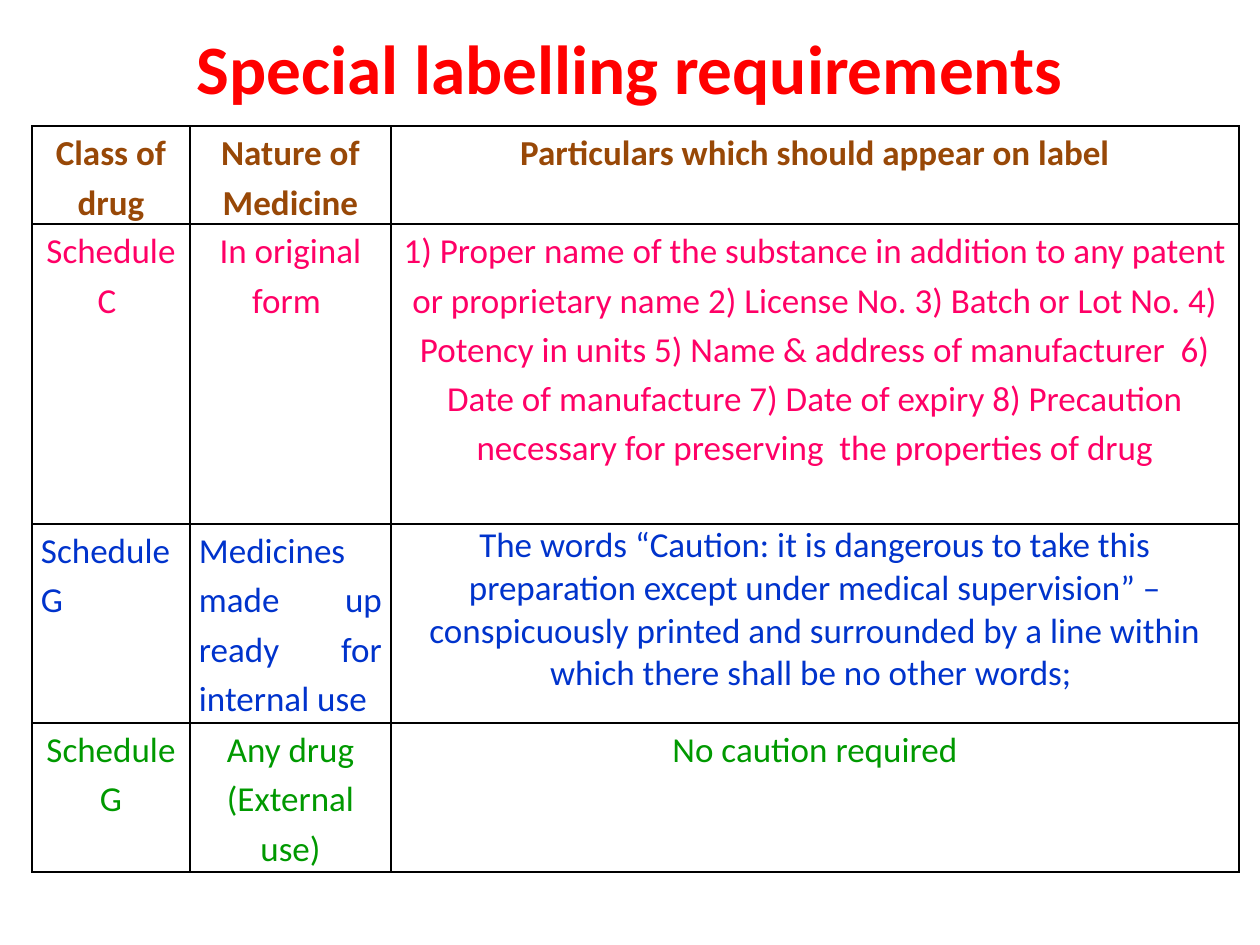
import lxml.etree
import pptx
import pptx.dml.color
import pptx.enum.text
import pptx.oxml.ns
import pptx.util

RGBColor = pptx.dml.color.RGBColor
RED = RGBColor(0xFF, 0x00, 0x00)
BROWN = RGBColor(0x98, 0x48, 0x07)
PINK = RGBColor(0xFF, 0x00, 0x66)
BLUE = RGBColor(0x00, 0x33, 0xCC)
GREEN = RGBColor(0x00, 0x99, 0x00)
BLACK = RGBColor(0x00, 0x00, 0x00)

CENTER = pptx.enum.text.PP_ALIGN.CENTER
JUSTIFY = pptx.enum.text.PP_ALIGN.JUSTIFY
FONT = "Calibri"
PX_PER_INCH = 126

COLUMN_WIDTHS = [158, 201, 848]
ROW_HEIGHTS = [98, 300, 199, 149]
REQUIREMENTS = [
    (BROWN, CENTER, ["Class of drug", "Nature of Medicine",
                     "Particulars which should appear on label"]),
    (PINK, CENTER, ["Schedule C ", "In original form ",
                    "1) Proper name of the substance in addition to any patent or "
                    "proprietary name 2) License No. 3) Batch or Lot No. "
                    "4) Potency in units 5) Name & address of manufacturer  "
                    "6) Date of manufacture 7) Date of expiry 8) Precaution "
                    "necessary for preserving  the properties of drug"]),
    (BLUE, JUSTIFY, ["Schedule G", "Medicines made up ready for internal use",
                     "The words “Caution: it is dangerous to take this preparation "
                     "except under medical supervision” – conspicuously printed and "
                     "surrounded by a line within which there shall be no other words; "]),
    (GREEN, CENTER, ["Schedule G", "Any drug (External use)", "No caution required"]),
]
CAUTION_CELL = (2, 2)


def px(length):
    return pptx.util.Emu(round(length * 914400 / PX_PER_INCH))


def write(paragraph, text, size, color, bold, alignment):
    paragraph.text = text
    paragraph.alignment = alignment
    paragraph.font.name = FONT
    paragraph.font.size = pptx.util.Pt(size)
    paragraph.font.bold = bold
    paragraph.font.color.rgb = color


def add_title(slide, text):
    title = slide.shapes.add_textbox(px(63), px(38), px(1134), px(57))
    frame = title.text_frame
    frame.word_wrap = True
    frame.vertical_anchor = pptx.enum.text.MSO_ANCHOR.MIDDLE
    write(frame.paragraphs[0], text, 39.6, RED, True, CENTER)


def add_borders(cell):
    qn = pptx.oxml.ns.qn
    properties = cell._tc.get_or_add_tcPr()
    for side in ("a:lnL", "a:lnR", "a:lnT", "a:lnB"):
        line = lxml.etree.SubElement(properties, qn(side), w=str(pptx.util.Pt(1)))
        fill = lxml.etree.SubElement(line, qn("a:solidFill"))
        lxml.etree.SubElement(fill, qn("a:srgbClr"), val=str(BLACK))


def fill_cell(cell, text, color, bold, alignment):
    cell.margin_left = cell.margin_right = px(9)
    cell.margin_top = cell.margin_bottom = 0
    add_borders(cell)
    cell.fill.background()
    paragraph = cell.text_frame.paragraphs[0]
    write(paragraph, text, 20, color, bold, alignment)
    return paragraph


def add_requirements(slide):
    table = slide.shapes.add_table(
        len(ROW_HEIGHTS), len(COLUMN_WIDTHS), px(32), px(126),
        px(sum(COLUMN_WIDTHS)), px(sum(ROW_HEIGHTS))).table
    table.first_row = False
    table.horz_banding = False
    for column, width in zip(table.columns, COLUMN_WIDTHS):
        column.width = px(width)
    for row, height in zip(table.rows, ROW_HEIGHTS):
        row.height = px(height)
    for r, (color, alignment, texts) in enumerate(REQUIREMENTS):
        for c, text in enumerate(texts):
            is_caution = (r, c) == CAUTION_CELL
            paragraph = fill_cell(table.cell(r, c), text, color, r == 0,
                                  CENTER if is_caution else alignment)
            if is_caution:
                paragraph.space_before = pptx.util.Pt(12)
            else:
                paragraph.line_spacing = 1.15
                paragraph.space_after = pptx.util.Pt(10)


def main():
    presentation = pptx.Presentation()
    presentation.slide_width = px(1260)
    presentation.slide_height = px(945)
    slide = presentation.slides.add_slide(presentation.slide_layouts[6])
    add_title(slide, "Special labelling requirements")
    add_requirements(slide)
    presentation.save("out.pptx")


if __name__ == "__main__":
    main()
